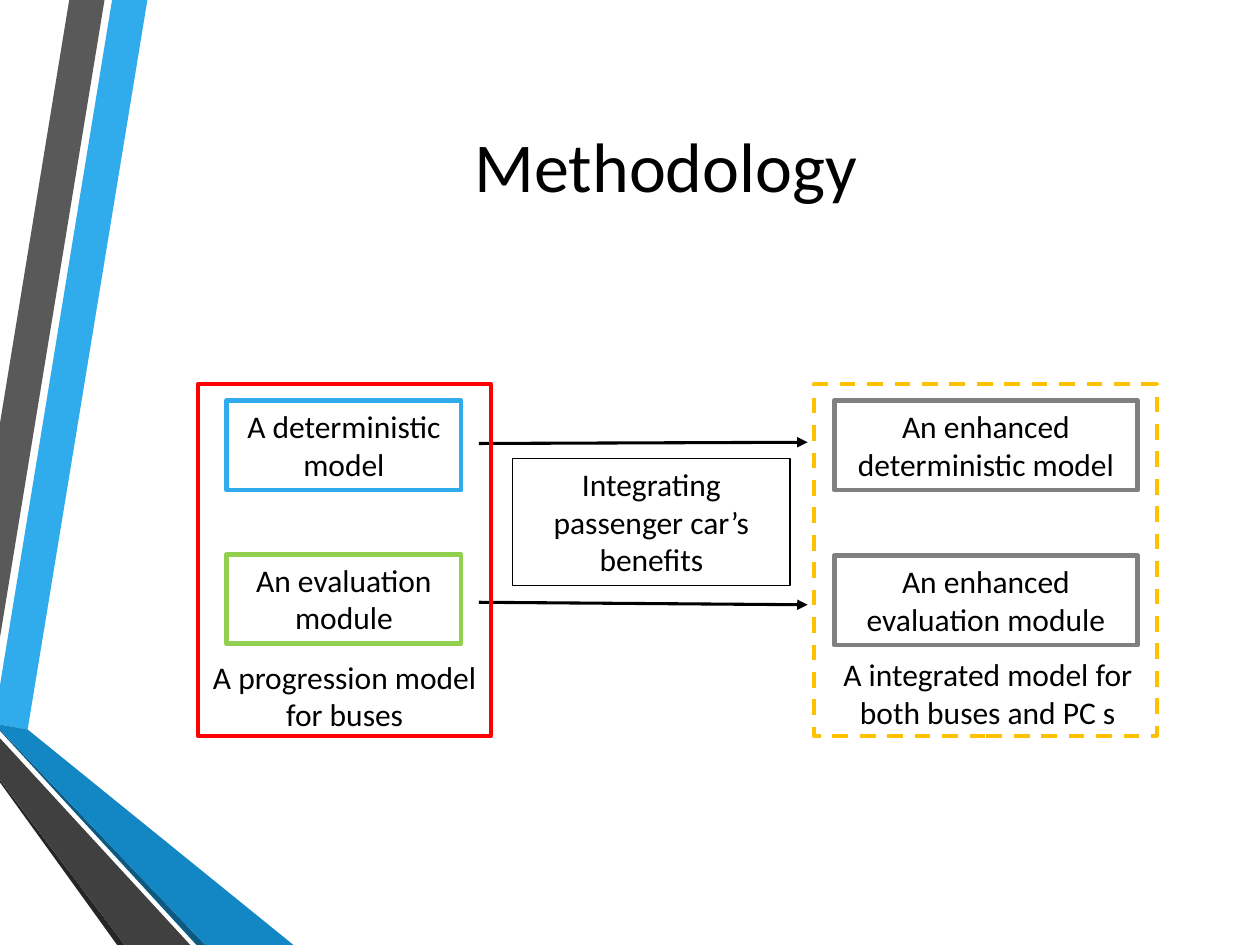
import pptx
import pptx.util
import pptx.oxml
import pptx.dml.color
import pptx.enum.dml
import pptx.enum.shapes
import pptx.enum.text
from pptx.util import Inches

COLORS = {
    "black": "000000", "blue": "30ACEC", "green": "92D050", "red": "FF0000",
    "gray": "808080", "amber": "FFC000", "dark": "595959", "shadow": "262626",
    "navy": "0C5A82", "ocean": "1287C3", "charcoal": "404040",
}
FONT = "Calibri"
TITLE = "Methodology"

RIBBONS = [
    ("blue", [(0, 5.44), (0, 5.75), (0.22, 5.79), (1.17, 0), (0.89, 0)]),
    ("dark", [(0.83, 0), (0.55, 0), (0, 3.36), (0, 5.06)]),
    ("shadow", [(0, 6.19), (0, 6.21), (0.93, 7.5), (0.99, 7.5)]),
    ("navy", [(0, 5.79), (0, 5.8), (1.56, 7.5), (1.63, 7.5)]),
    ("ocean", [(0, 5.79), (1.63, 7.5), (2.33, 7.5), (0.22, 5.79), (0, 5.75)]),
    ("charcoal", [(0, 6.19), (0.99, 7.5), (1.51, 7.5), (0, 5.86)]),
]
FRAMES = [
    ("red", 1.57, 2.33, False),
    ("amber", 6.46, 2.72, True),
]
FRAME_TOP, FRAME_HEIGHT = 3.05, 2.79
BOXES = [
    ("A deterministic model", "blue", 2.75, (1.8, 3.18, 1.86, 0.71)),
    ("An evaluation module", "green", 2.75, (1.8, 4.4, 1.86, 0.71)),
    ("An enhanced deterministic model", "gray", 2.75, (6.62, 3.18, 2.41, 0.71)),
    ("An enhanced evaluation module", "gray", 2.75, (6.62, 4.41, 2.41, 0.71)),
    ("Integrating passenger car’s benefits", "black", 0.75, (4.07, 3.64, 2.2, 1.01)),
]
CAPTIONS = [
    ("A progression model for buses", (1.54, 5.17, 2.39, 0.71)),
    ("A integrated model for both buses and PC s", (6.47, 5.15, 2.74, 0.71)),
]
ARROW_LEFT, ARROW_RIGHT = 3.8, 6.41
ARROWS = [(3.52, 3.51), (4.78, 4.8)]


def rgb(name):
    return pptx.dml.color.RGBColor.from_string(COLORS[name])


def write(sp, text, size):
    tf = sp.text_frame
    tf.text = text
    tf.word_wrap = True
    p = tf.paragraphs[0]
    p.alignment = pptx.enum.text.PP_ALIGN.CENTER
    font = p.runs[0].font
    font.name, font.size = FONT, pptx.util.Pt(size)
    font.color.rgb = rgb("black")


def place(sp, box):
    sp.left, sp.top, sp.width, sp.height = map(Inches, box)


def add_ribbon(s, color, points):
    start, *rest = [(Inches(x), Inches(y)) for x, y in points]
    builder = s.shapes.build_freeform(*start)
    builder.add_line_segments(rest, close=True)
    sp = builder.convert_to_shape()
    sp.shadow.inherit = False
    sp.fill.solid()
    sp.fill.fore_color.rgb = rgb(color)
    sp.line.fill.background()


def add_outline(s, color, weight, box):
    sp = s.shapes.add_shape(pptx.enum.shapes.MSO_SHAPE.RECTANGLE, *map(Inches, box))
    sp.shadow.inherit = False
    sp.fill.background()
    sp.line.color.rgb = rgb(color)
    sp.line.width = pptx.util.Pt(weight)
    return sp


def add_arrow(s, y1, y2):
    ends = map(Inches, (ARROW_LEFT, y1, ARROW_RIGHT, y2))
    c = s.shapes.add_connector(pptx.enum.shapes.MSO_CONNECTOR.STRAIGHT, *ends)
    c.line.color.rgb = rgb("black")
    c.line.width = pptx.util.Pt(1.75)
    ns = pptx.oxml.ns.nsdecls("a")
    c.line._get_or_add_ln().append(
        pptx.oxml.parse_xml(f'<a:tailEnd {ns} type="triangle"/>'))
    c._element.spPr.append(pptx.oxml.parse_xml(f"<a:effectLst {ns}/>"))


def main():
    prs = pptx.Presentation()
    prs.slide_width, prs.slide_height = Inches(10), Inches(7.5)
    s = prs.slides.add_slide(prs.slide_layouts[5])

    for color, points in RIBBONS:
        add_ribbon(s, color, points)

    title = s.shapes.title
    place(title, (1.07, 0.5, 8.43, 1.61))
    write(title, TITLE, 40)
    title.text_frame.vertical_anchor = pptx.enum.text.MSO_ANCHOR.MIDDLE

    for y1, y2 in ARROWS:
        add_arrow(s, y1, y2)
    for text, color, weight, box in BOXES:
        sp = add_outline(s, color, weight, box)
        write(sp, text, 18)
        sp.text_frame.vertical_anchor = pptx.enum.text.MSO_ANCHOR.TOP
    for text, box in CAPTIONS:
        write(s.shapes.add_textbox(*map(Inches, box)), text, 18)
    for color, left, width, dashed in FRAMES:
        sp = add_outline(s, color, 2.25, (left, FRAME_TOP, width, FRAME_HEIGHT))
        if dashed:
            sp.line.dash_style = pptx.enum.dml.MSO_LINE.DASH

    prs.save("out.pptx")


if __name__ == "__main__":
    main()
